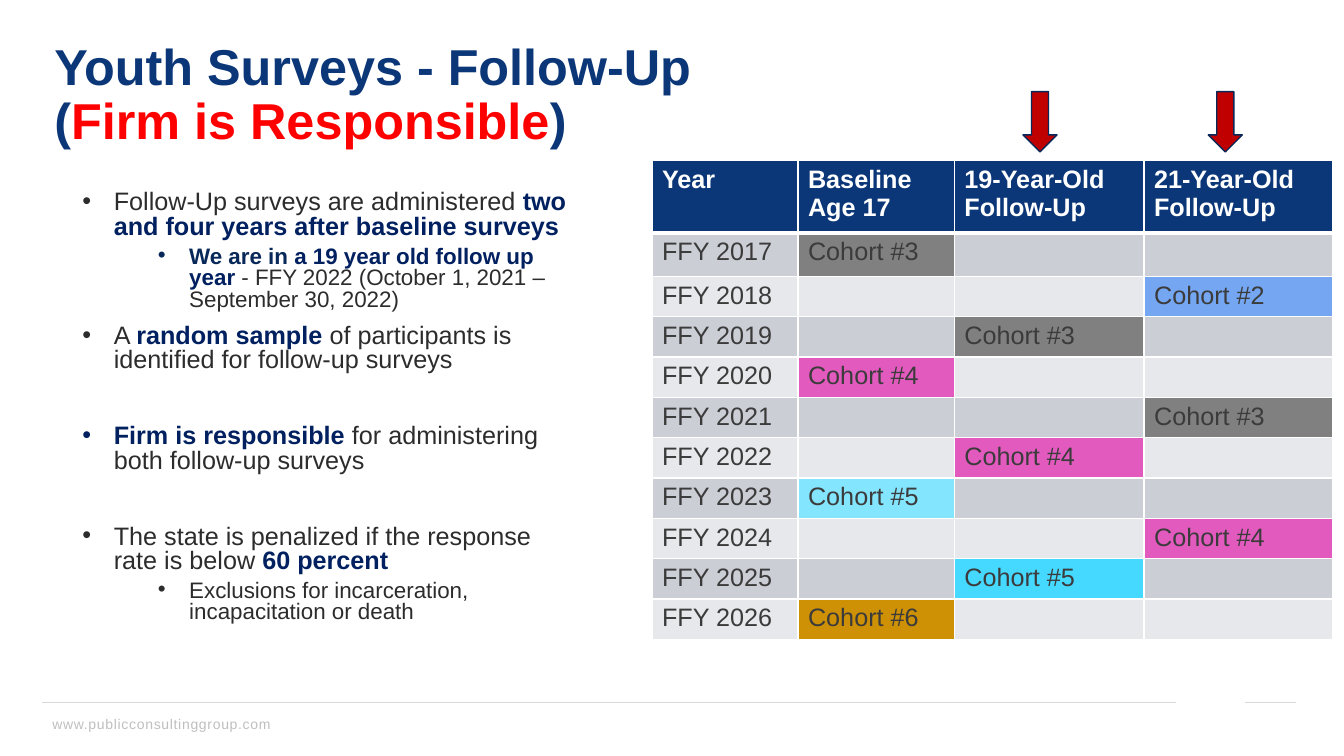
from lxml import etree
from pptx import Presentation
from pptx.dml.color import RGBColor
from pptx.enum.shapes import MSO_CONNECTOR, MSO_SHAPE
from pptx.enum.text import MSO_ANCHOR
from pptx.oxml.ns import qn
from pptx.util import Cm, Pt

STRAIGHT = MSO_CONNECTOR.STRAIGHT
DOWN_ARROW = MSO_SHAPE.DOWN_ARROW
MIDDLE, TOP = MSO_ANCHOR.MIDDLE, MSO_ANCHOR.TOP

# Colours
WHITE = RGBColor(0xFF, 0xFF, 0xFF)
BLUE = RGBColor(0x0B, 0x36, 0x77)
NAVY = RGBColor(0x00, 0x20, 0x60)
INK = RGBColor(0x08, 0x28, 0x59)
RED = RGBColor(0xFF, 0x00, 0x00)
DARK_RED = RGBColor(0xC0, 0x00, 0x00)
TEXT = RGBColor(0x2C, 0x2C, 0x2C)
CELL_TEXT = RGBColor(0x3B, 0x3B, 0x3B)
FOOTER_GREY = RGBColor(0xBF, 0xBF, 0xBF)
RULE_GREY = RGBColor(0xD9, 0xD9, 0xD9)
BANDS = (RGBColor(0xCC, 0xCE, 0xD6), RGBColor(0xE7, 0xE8, 0xEC))
GREY = RGBColor(0x80, 0x80, 0x80)
SKY = RGBColor(0x74, 0xA6, 0xF2)
PINK = RGBColor(0xE3, 0x5A, 0xBF)
PALE_CYAN = RGBColor(0x84, 0xE5, 0xFF)
CYAN = RGBColor(0x46, 0xD9, 0xFF)
GOLD = RGBColor(0xCE, 0x91, 0x05)

# Content: runs are (text, colour, bold)
TITLE = [
    [("Youth Surveys - Follow-Up", BLUE, True)],
    [("(", BLUE, True), ("Firm is Responsible", RED, True), (")", BLUE, True)],
]
# Bullets are (level, space before in points, runs)
BULLETS = [
    (0, 0, [("Follow-Up surveys are administered ", TEXT, False),
            ("two and four years after baseline surveys", NAVY, True)]),
    (1, 5, [("We are in ", INK, True),
            ("a 19 year old follow up year ", NAVY, True),
            ("- FFY 2022 (October 1, 2021 – September 30, 2022)", TEXT, False)]),
    (0, 10, [("A ", TEXT, False), ("random sample ", NAVY, True),
             ("of participants is identified for follow-up surveys", TEXT, False)]),
    (0, 37, [("Firm is responsible ", NAVY, True),
             ("for administering both follow-up surveys", TEXT, False)]),
    (0, 37, [("The state is penalized if the response rate is below ", TEXT, False),
             ("60 percent", NAVY, True)]),
    (1, 5, [("Exclusions for incarceration, incapacitation or death", TEXT, False)]),
]
HEADERS = [["Year"], ["Baseline", "Age 17"],
           ["19-Year-Old", "Follow-Up"], ["21-Year-Old", "Follow-Up"]]
FIRST_YEAR = 2017
# One entry per year: (column, cohort number, fill)
COHORTS = [
    (1, 3, GREY), (3, 2, SKY), (2, 3, GREY), (1, 4, PINK), (3, 3, GREY),
    (2, 4, PINK), (1, 5, PALE_CYAN), (3, 4, PINK), (2, 5, CYAN), (1, 6, GOLD),
]
FOOTER = "www.publicconsultinggroup.com"

# Layout, in centimetres
COLUMN_WIDTHS = (3.68, 3.94, 4.78, 4.75)
ROW_HEIGHTS = [1.83, 1.09] + [1.01] * (len(COHORTS) - 1)
ARROW_LEFTS = (25.78, 30.45)
FOOTER_RULES = ((1.07, 29.64), (31.37, 32.66))
LEVELS = ({"indent": 0.79, "size": 18}, {"indent": 2.69, "size": 16})
HANGING = 0.79


def add_runs(para, runs, size):
    for text, colour, bold in runs:
        span = para.add_run()
        span.text = text
        for name, value in {"name": "Arial", "size": Pt(size), "bold": bold}.items():
            setattr(span.font, name, value)
        span.font.color.rgb = colour


def add_box(left, top, width, height, anchor=TOP):
    box = page.shapes.add_textbox(Cm(left), Cm(top), Cm(width), Cm(height))
    box.text_frame.word_wrap = True
    box.text_frame.vertical_anchor = anchor
    return box.text_frame


def paragraphs(frame, count):
    """Return the given number of paragraphs of an empty text frame."""
    return [frame.paragraphs[0]] + [frame.add_paragraph() for _ in range(count - 1)]


def add_border(cell, side, points):
    line = etree.SubElement(cell._tc.get_or_add_tcPr(), qn("a:" + side), w=str(Pt(points)))
    fill = etree.SubElement(line, qn("a:solidFill"))
    etree.SubElement(fill, qn("a:srgbClr"), val=str(WHITE))


def fill_cell(row, column, lines, fill, colour, bold):
    cell = table.cell(row, column)
    top, bottom = (3 if row == 1 else 1), (3 if row == 0 else 1)
    for side, points in {"lnL": 1, "lnR": 1, "lnT": top, "lnB": bottom}.items():
        add_border(cell, side, points)
    cell.fill.solid()
    cell.fill.fore_color.rgb = fill
    for para, text in zip(paragraphs(cell.text_frame, len(lines)), lines):
        add_runs(para, [(text, colour, bold)], 18)


deck = Presentation()
deck.slide_width, deck.slide_height = Cm(33.87), Cm(19.05)
page = deck.slides.add_slide(deck.slide_layouts[6])

# Footer
footer = add_box(1.07, 17.91, 9.83, 0.71).paragraphs[0]
add_runs(footer, [(FOOTER, FOOTER_GREY, False)], 10)
footer.runs[0].font._element.set("spc", "50")
for start, end in FOOTER_RULES:
    rule = page.shapes.add_connector(STRAIGHT, Cm(start), Cm(17.7), Cm(end), Cm(17.7))
    rule.line.color.rgb = RULE_GREY
    rule.line.width = Pt(0.5)
    etree.SubElement(rule._element.spPr, qn("a:effectLst"))

# Title
title = add_box(1.12, 1.02, 31.65, 2.82, MIDDLE).paragraphs[0]
title.line_spacing = 0.9
for number, runs in enumerate(TITLE):
    if number:
        title.add_line_break()
    add_runs(title, runs, 36)

# Bullets
body = add_box(1.83, 4.7, 13.06, 11.63)
for para, (level, before, runs) in zip(paragraphs(body, len(BULLETS)), BULLETS):
    style = LEVELS[level]
    properties = para._p.get_or_add_pPr()
    properties.set("marL", str(Cm(style["indent"])))
    properties.set("indent", str(-Cm(HANGING)))
    etree.SubElement(properties, qn("a:buFont"), typeface="Arial")
    etree.SubElement(properties, qn("a:buChar"), char="•")
    for name, value in {"level": level, "line_spacing": 0.8, "space_before": Pt(before)}.items():
        setattr(para, name, value)
    add_runs(para, runs, style["size"])

# Arrows over the follow-up columns
for left in ARROW_LEFTS:
    arrow = page.shapes.add_shape(DOWN_ARROW, Cm(left), Cm(2.31), Cm(0.86), Cm(1.52))
    arrow.shadow.inherit = False
    arrow.fill.solid()
    arrow.fill.fore_color.rgb = DARK_RED
    arrow.line.color.rgb = INK
    arrow.line.width = Pt(1)

# Cohort table
table = page.shapes.add_table(
    len(ROW_HEIGHTS), len(COLUMN_WIDTHS), Cm(16.43), Cm(4.04),
    Cm(sum(COLUMN_WIDTHS)), Cm(sum(ROW_HEIGHTS))).table
for column, width in zip(table.columns, COLUMN_WIDTHS):
    column.width = Cm(width)
for row, height in zip(table.rows, ROW_HEIGHTS):
    row.height = Cm(height)
for column, lines in enumerate(HEADERS):
    fill_cell(0, column, lines, BLUE, WHITE, True)
for index, (cohort_column, cohort, cohort_fill) in enumerate(COHORTS):
    for column in range(len(COLUMN_WIDTHS)):
        lines, fill = [], BANDS[index % 2]
        if column == 0:
            lines = [f"FFY {FIRST_YEAR + index}"]
        elif column == cohort_column:
            lines, fill = [f"Cohort #{cohort}"], cohort_fill
        fill_cell(index + 1, column, lines, fill, CELL_TEXT, False)

deck.save("out.pptx")
